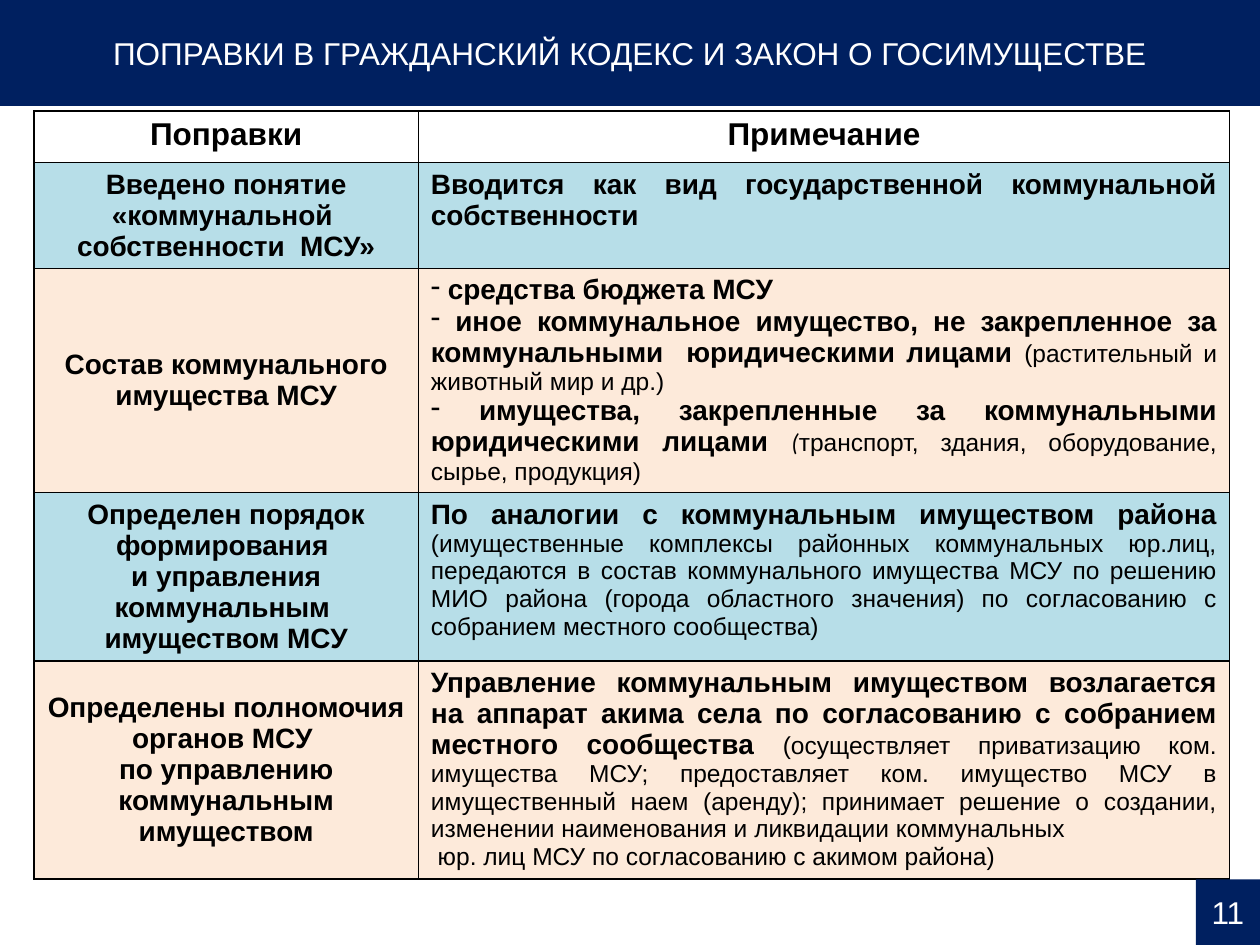
import pptx
import pptx.util
import pptx.dml.color
import pptx.enum.shapes
import pptx.enum.text
import pptx.oxml
import pptx.oxml.ns
from lxml import etree

Inches = pptx.util.Inches
Pt = pptx.util.Pt
ALIGN = pptx.enum.text.PP_ALIGN
MIDDLE = pptx.enum.text.MSO_ANCHOR.MIDDLE

COLORS = {
    "navy": "002060",
    "white": "FFFFFF",
    "black": "000000",
    "blue": "B7DEE8",
    "peach": "FDEADA",
}

# Run styles: size, bold, italic, font
STYLES = {
    "key": (16, True, False, "Arial"),
    "dash": (16, False, False, "Arial"),
    "detail": (14, False, False, "Arial"),
    "bracket": (14, False, True, "Calibri"),
}

HEADERS = ["Поправки", "Примечание"]
COL_WIDTHS = [3.05, 6.44]
ROW_HEIGHTS = [0.41, 0.83, 1.78, 1.33, 1.73]

# Each row: amendment paragraphs, note paragraphs (lists of runs), bulleted or not
ROWS = [
    (
        ["Введено понятие «коммунальной ", "собственности  МСУ»"],
        [[("Вводится как вид государственной коммунальной собственности", "key")]],
        False,
    ),
    (
        ["Состав коммунального имущества МСУ"],
        [
            [(" ", "dash"), ("средства бюджета МСУ", "key")],
            [
                (" ", "dash"),
                ("иное коммунальное имущество, не закрепленное за "
                 "коммунальными  юридическими лицами ", "key"),
                ("(растительный и животный мир и др.)", "detail"),
            ],
            [
                (" ", "dash"),
                ("имущества, закрепленные за коммунальными юридическими лицами ", "key"),
                ("(", "bracket"),
                ("транспорт, здания, оборудование, сырье, продукция)", "detail"),
            ],
        ],
        True,
    ),
    (
        ["Определен порядок формирования ", "и управления коммунальным ", "имуществом МСУ"],
        [[
            ("По аналогии с коммунальным имуществом района ", "key"),
            ("(имущественные комплексы районных коммунальных юр.лиц, передаются в состав "
             "коммунального имущества МСУ по решению МИО района (города областного значения) "
             "по согласованию с собранием местного сообщества) ", "detail"),
        ]],
        False,
    ),
    (
        ["Определены полномочия органов МСУ ", "по управлению коммунальным имуществом"],
        [
            [
                ("Управление коммунальным имуществом возлагается на аппарат акима села "
                 "по согласованию с собранием местного сообщества ", "key"),
                ("(осуществляет приватизацию ком. имущества МСУ; предоставляет ком. имущество "
                 "МСУ в имущественный наем (аренду); принимает решение о создании, изменении "
                 "наименования и ликвидации коммунальных", "detail"),
            ],
            [(" юр. лиц МСУ по согласованию с акимом района)", "detail")],
        ],
        False,
    ),
]


def rgb(name):
    return pptx.dml.color.RGBColor.from_string(COLORS[name])


def place(sp, left, top, width, height):
    sp.left, sp.top = Inches(left), Inches(top)
    sp.width, sp.height = Inches(width), Inches(height)


def format_font(font, size, color, bold=False, name="Arial"):
    font.size, font.bold, font.name = Pt(size), bold, name
    font.color.rgb = rgb(color)


def fill_banner(sp, text):
    """Give a shape the navy fill and centred white text."""
    sp.fill.solid()
    sp.fill.fore_color.rgb = rgb("navy")
    sp.line.fill.background()
    tf = sp.text_frame
    tf.word_wrap = True
    tf.auto_size = pptx.enum.text.MSO_AUTO_SIZE.NONE
    tf.vertical_anchor = MIDDLE
    tf.text = text
    p = tf.paragraphs[0]
    p.alignment = ALIGN.CENTER
    format_font(p.font, 18, "white")


def add_page_number(slide, number):
    sp = slide.shapes.add_shape(
        pptx.enum.shapes.MSO_SHAPE.RECTANGLE,
        Inches(9.49), Inches(6.98), Inches(0.51), Inches(0.52))
    sp.shadow.inherit = False
    fill_banner(sp, str(number))


def style_cell(cell, color=None):
    """Draw thin black borders and fill the cell."""
    tc_pr = cell._tc.get_or_add_tcPr()
    for side in ("lnL", "lnR", "lnT", "lnB"):
        tc_pr.append(pptx.oxml.parse_xml(
            f'<a:{side} {pptx.oxml.ns.nsdecls("a")} w="{Pt(1)}"><a:solidFill>'
            f'<a:srgbClr val="{COLORS["black"]}"/></a:solidFill></a:{side}>'))
    if color:
        cell.fill.solid()
        cell.fill.fore_color.rgb = rgb(color)
    else:
        cell.fill.background()


def write_centred(cell, lines, size):
    cell.text = "\n".join(lines)
    for p in cell.text_frame.paragraphs:
        p.alignment = ALIGN.CENTER
        format_font(p.font, size, "black", bold=True)


def add_dash_bullet(p):
    p_pr = p._p.get_or_add_pPr()
    p_pr.set("marL", "0")
    p_pr.set("indent", "0")
    bullet = etree.SubElement(p_pr, pptx.oxml.ns.qn("a:buChar"))
    bullet.set("char", "-")


def write_note(cell, paragraphs, bulleted):
    tf = cell.text_frame
    for i, runs in enumerate(paragraphs):
        p = tf.add_paragraph() if i else tf.paragraphs[0]
        p.alignment = ALIGN.JUSTIFY
        if bulleted:
            add_dash_bullet(p)
        for text, style in runs:
            size, bold, italic, name = STYLES[style]
            r = p.add_run()
            r.text = text
            format_font(r.font, size, "black", bold, name)
            r.font.italic = italic


def add_amendments_table(slide):
    table = slide.shapes.add_table(
        len(ROW_HEIGHTS), len(COL_WIDTHS), Inches(0.27), Inches(0.88),
        Inches(sum(COL_WIDTHS)), Inches(sum(ROW_HEIGHTS))).table
    for column, width in zip(table.columns, COL_WIDTHS):
        column.width = Inches(width)
    for row, height in zip(table.rows, ROW_HEIGHTS):
        row.height = Inches(height)
    for cell, header in zip(table.rows[0].cells, HEADERS):
        style_cell(cell)
        write_centred(cell, [header], 18)
    for i, (amendment, note, bulleted) in enumerate(ROWS, start=1):
        left, right = table.rows[i].cells
        for cell in (left, right):
            style_cell(cell, "blue" if i % 2 else "peach")
        left.vertical_anchor = MIDDLE
        write_centred(left, amendment, 16)
        write_note(right, note, bulleted)


def main():
    prs = pptx.Presentation()
    prs.slide_width, prs.slide_height = Inches(10), Inches(7.5)
    slide = prs.slides.add_slide(prs.slide_layouts[5])
    title = slide.shapes.title
    place(title, 0, 0, 10, 0.84)
    fill_banner(title, "ПОПРАВКИ В ГРАЖДАНСКИЙ КОДЕКС И ЗАКОН О ГОСИМУЩЕСТВЕ")
    add_amendments_table(slide)
    add_page_number(slide, 11)
    prs.save("out.pptx")


if __name__ == "__main__":
    main()
